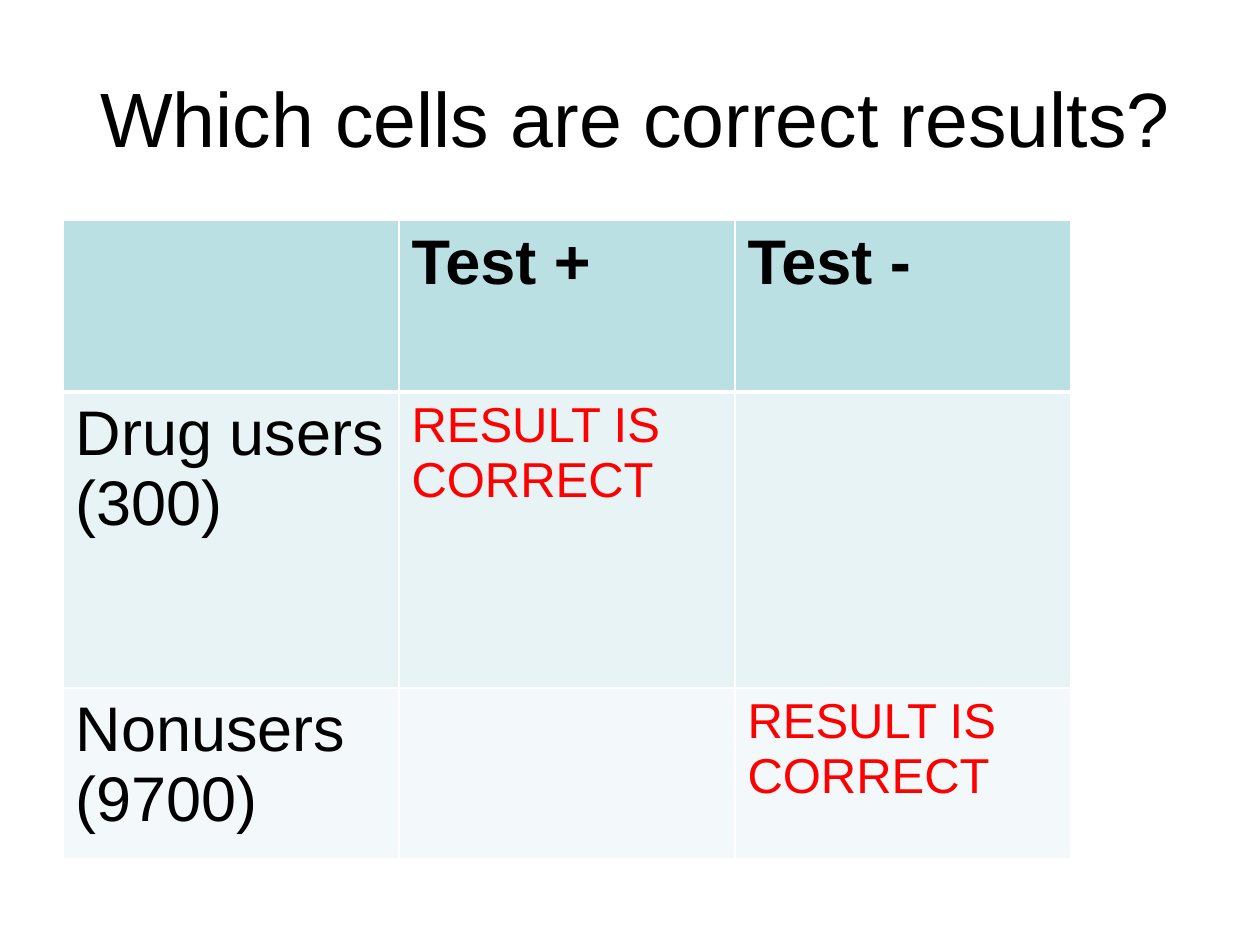
from lxml import etree
from pptx import Presentation
from pptx.dml.color import RGBColor
from pptx.enum import text
from pptx.oxml import ns
from pptx.util import Cm, Pt

TITLE = "Which cells are correct results?"
ROWS = [
    ["", "Test +", "Test -"],
    ["Drug users (300)", "RESULT IS CORRECT", ""],
    ["Nonusers (9700)", "", "RESULT IS\vCORRECT"],
]
ROW_HEIGHTS = [Cm(3.45), Cm(5.97), Cm(3.45)]
TITLE_BOX = {"left": Cm(0.43), "top": Cm(0.76), "width": Cm(24.77), "height": Cm(3.18)}
TABLE_BOX = {"left": Cm(1.27), "top": Cm(4.45), "width": Cm(20.32), "height": sum(ROW_HEIGHTS)}

THEME = {
    "fills": ["BBE0E3", "E7F3F4", "F3F9FA"],
    "border": "FFFFFF",
    "thin": Pt(1),
    "thick": Pt(3),
    "title": {"size": Pt(44), "bold": False, "color": "000000"},
    "header": {"size": Pt(36), "bold": True, "color": "000000"},
    "label": {"size": Pt(36), "bold": False, "color": "000000"},
    "result": {"size": Pt(28), "bold": False, "color": "FF0000"},
}


def set_attributes(target, values):
    for name, value in values.items():
        setattr(target, name, value)


def style_text(text_frame, style):
    for paragraph in text_frame.paragraphs:
        for run in paragraph.runs:
            set_attributes(run.font, {"name": "Arial", "size": style["size"], "bold": style["bold"]})
            run.font.color.rgb = RGBColor.from_string(style["color"])


def set_borders(cell, widths):
    """Draw the cell edges; they must come before the fill in the XML."""
    properties = cell._tc.get_or_add_tcPr()
    for position, (edge, width) in enumerate(widths.items()):
        line = etree.Element(ns.qn(f"a:ln{edge}"), w=str(width))
        solid = etree.SubElement(line, ns.qn("a:solidFill"))
        etree.SubElement(solid, ns.qn("a:srgbClr"), val=THEME["border"])
        properties.insert(position, line)


def add_title(slide):
    title = slide.shapes.title
    set_attributes(title, TITLE_BOX)
    frame = title.text_frame
    frame.text = TITLE
    set_attributes(frame, {"word_wrap": True, "vertical_anchor": text.MSO_ANCHOR.MIDDLE})
    frame.paragraphs[0].alignment = text.PP_ALIGN.CENTER
    style_text(frame, THEME["title"])


def add_results_table(slide):
    column_count = len(ROWS[0])
    table = slide.shapes.add_table(len(ROWS), column_count, **TABLE_BOX).table
    for column in table.columns:
        column.width = TABLE_BOX["width"] // column_count
    for row_index, values in enumerate(ROWS):
        table.rows[row_index].height = ROW_HEIGHTS[row_index]
        for column_index, value in enumerate(values):
            cell = table.cell(row_index, column_index)
            cell.text = value
            role = "header" if row_index == 0 else "label" if column_index == 0 else "result"
            style_text(cell.text_frame, THEME[role])
            cell.fill.solid()
            cell.fill.fore_color.rgb = RGBColor.from_string(THEME["fills"][row_index])
            widths = dict.fromkeys("LRTB", THEME["thin"])
            if row_index == 0:
                widths["B"] = THEME["thick"]
            elif row_index == 1:
                widths["T"] = THEME["thick"]
            set_borders(cell, widths)


def main():
    presentation = Presentation()
    set_attributes(presentation, {"slide_width": Cm(25.4), "slide_height": Cm(19.05)})
    slide = presentation.slides.add_slide(presentation.slide_layouts.get_by_name("Title Only"))
    add_title(slide)
    add_results_table(slide)
    presentation.save("out.pptx")


if __name__ == "__main__":
    main()
